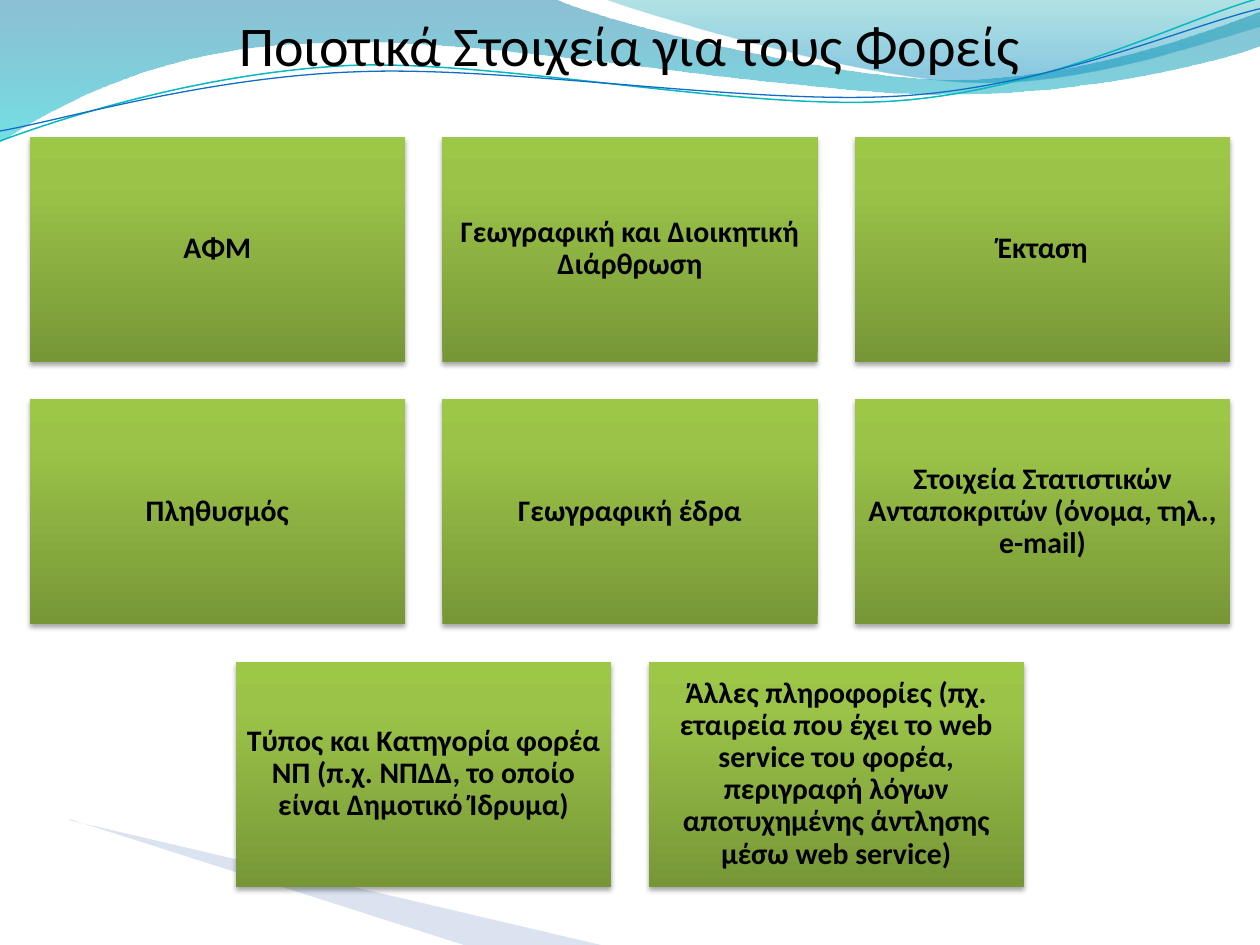
from lxml.etree import SubElement
from pptx import Presentation
from pptx.dml.color import RGBColor
from pptx.enum.shapes import MSO_SHAPE
from pptx.enum.text import MSO_ANCHOR, PP_ALIGN
from pptx.oxml.ns import qn
from pptx.util import Pt

# Content
TITLE = "Ποιοτικά Στοιχεία για τους Φορείς"
ROWS = [
    ["ΑΦΜ", "Γεωγραφική και Διοικητική Διάρθρωση", "Έκταση"],
    ["Πληθυσμός", "Γεωγραφική έδρα",
     "Στοιχεία Στατιστικών Ανταποκριτών (όνομα, τηλ., e-mail)"],
    ["Τύπος και Κατηγορία φορέα ΝΠ (π.χ. ΝΠΔΔ, το οποίο είναι Δημοτικό Ίδρυμα)",
     "Άλλες πληροφορίες (πχ. εταιρεία που έχει το web service του φορέα, "
     "περιγραφή λόγων αποτυχημένης άντλησης μέσω web service)"],
]

# Colours; gradient stops are (position %, colour, opacity %)
BLACK = RGBColor(0x00, 0x00, 0x00)
TEAL = RGBColor(0x0A, 0xB8, 0xBF)
BLUE = RGBColor(0x0F, 0x6F, 0xC6)
PALE_BLUE = RGBColor(0xA7, 0xB9, 0xDB)
LEFT_WAVE = [(0, RGBColor(0x00, 0x74, 0xA1), 45), (100, RGBColor(0x00, 0xC6, 0xCF), 55)]
RIGHT_WAVE = [(0, RGBColor(0x00, 0xA1, 0xA9), 30), (80, RGBColor(0x00, 0x8B, 0xBF), 45)]
GREEN = [(0, RGBColor(0x77, 0x97, 0x37), 100), (80, RGBColor(0x9B, 0xC3, 0x48), 100),
         (100, RGBColor(0x9D, 0xC7, 0x46), 100)]

# Outlines in points: a pair is a corner, six numbers are a Bezier segment
WAVES = [
    (LEFT_WAVE, [(0, 0), (316.8, -0.7), (342.7, 12.2, 478.1, 45.4, 545.8, 45.4),
                 (614.2, 45.4, 689.8, 18.7, 720, 6.5), (720.7, 25.9),
                 (707.8, 31.7, 626.4, 54.7, 537.1, 54),
                 (447.8, 54, 275, 20.2, 185, 24.5),
                 (92.9, 25.9, 33.1, 59.8, -0.7, 81.4), (0, 0)]),
    (RIGHT_WAVE, [(344.9, -0.7), (366.5, 7.9, 491, 44.6, 553.7, 46.8),
                  (616.3, 49.7, 691.9, 23, 720, 15.1), (720, 0), (344.9, -0.7)]),
]
CURVE_ROTATION = 357.3
CURVES = [
    (TEAL, 0.85, [(-1.4, 63.6), (33.8, 52.4, 114.1, 30.2, 199.8, 29.9),
                  (284.9, 30.3, 425.9, 67.3, 512.5, 64.8),
                  (599.1, 62.4, 676.5, 26.4, 720.2, 16.3)]),
    (BLUE, 0.75, [(-1.1, 57.9), (32.9, 53.7, 118.3, 32.5, 204.1, 33.7),
                  (290.6, 34.1, 428.9, 63.8, 515.5, 62.1),
                  (601.4, 60.4, 678.5, 30.1, 721.4, 22)]),
]
WEDGE = [(39.6, 468.7), (343.4, 540), (265, 540), (39.6, 468)]

# Layout
SLIDE_WIDTH, SLIDE_HEIGHT = 720, 540
BOX_WIDTH, BOX_HEIGHT, GAP = 214.4, 128.6, 21.4
FIRST_TOP = 78


def add_outline(shapes, outline, close=False):
    """Draw all points as lines, then merge each triple of a Bezier segment."""
    points = [(Pt(segment[i]), Pt(segment[i + 1]))
              for segment in outline for i in range(0, len(segment), 2)]
    builder = shapes.build_freeform(*points[0], scale=1.0)
    builder.add_line_segments(points[1:], close=close)
    shape = builder.convert_to_shape()
    lines = iter(list(shape._element.spPr.iter(qn("a:lnTo"))))
    for segment in outline[1:]:
        line = next(lines)
        if len(segment) == 6:
            curve = line.makeelement(qn("a:cubicBezTo"))
            line.addprevious(curve)
            for part in (line, next(lines), next(lines)):
                curve.append(part[0])
                part.getparent().remove(part)
    shape.shadow.inherit = False
    shape.line.fill.background()
    shape.fill.background()
    return shape


def add_colour(parent, colour, opacity):
    element = SubElement(parent, qn("a:srgbClr"), val=str(colour))
    if opacity < 100:
        SubElement(element, qn("a:alpha"), val=str(opacity * 1000))


def set_gradient(shape, stops, angle):
    shape.fill.gradient()
    shape.fill.gradient_angle = angle
    stop_list = shape._element.spPr.find(".//" + qn("a:gsLst"))
    for stop in list(stop_list):
        stop_list.remove(stop)
    for position, colour, opacity in stops:
        stop = SubElement(stop_list, qn("a:gs"), pos=str(position * 1000))
        add_colour(stop, colour, opacity)


def add_shadow(shape):
    shape.shadow.inherit = False
    effects = shape._element.spPr.find(qn("a:effectLst"))
    shadow = SubElement(effects, qn("a:outerShdw"), blurRad=str(Pt(3.1)),
                        dist=str(Pt(1.8)), dir="5400000", rotWithShape="0")
    add_colour(shadow, BLACK, 35)


def set_text(shape, text, size, bold, inset, line_spacing):
    frame = shape.text_frame
    frame.word_wrap = True
    frame.vertical_anchor = MSO_ANCHOR.MIDDLE
    for side in ("left", "top", "right", "bottom"):
        setattr(frame, "margin_" + side, Pt(inset))
    paragraph = frame.paragraphs[0]
    paragraph.text = text
    paragraph.alignment = PP_ALIGN.CENTER
    paragraph.line_spacing = line_spacing
    font = paragraph.runs[0].font
    for name, value in {"name": "Calibri", "size": Pt(size), "bold": bold}.items():
        setattr(font, name, value)
    font.color.rgb = BLACK


def main():
    presentation = Presentation()
    presentation.slide_width, presentation.slide_height = Pt(SLIDE_WIDTH), Pt(SLIDE_HEIGHT)
    slide = presentation.slides.add_slide(presentation.slide_layouts[6])
    shapes = slide.shapes

    # Waves, curves and wedge behind the content
    for stops, outline in WAVES:
        set_gradient(add_outline(shapes, outline, close=True), stops, 270)
    for colour, width, outline in CURVES:
        curve = add_outline(shapes, outline)
        curve.rotation = CURVE_ROTATION
        curve.line.color.rgb = colour
        curve.line.width = Pt(width)
    wedge = add_outline(shapes, WEDGE)
    wedge.fill.solid()
    wedge.fill.fore_color.rgb = PALE_BLUE
    wedge_colour = wedge._element.spPr.find(qn("a:solidFill"))[0]
    SubElement(wedge_colour, qn("a:alpha"), val="40000")

    # Title
    title = shapes.add_textbox(0, 0, Pt(SLIDE_WIDTH), Pt(50.4))
    set_text(title, TITLE, 32, False, 3.6, 1.0)

    # Box rows, each centred on the slide
    for row, labels in enumerate(ROWS):
        row_width = len(labels) * (BOX_WIDTH + GAP) - GAP
        left = (SLIDE_WIDTH - row_width) / 2
        top = FIRST_TOP + row * (BOX_HEIGHT + GAP)
        for column, label in enumerate(labels):
            box = shapes.add_shape(MSO_SHAPE.RECTANGLE, Pt(left + column * (BOX_WIDTH + GAP)),
                                   Pt(top), Pt(BOX_WIDTH), Pt(BOX_HEIGHT))
            box.line.fill.background()
            set_gradient(box, GREEN, 90)
            add_shadow(box)
            set_text(box, label, 17, True, 5.1, 0.9)

    presentation.save("out.pptx")


if __name__ == "__main__":
    main()
